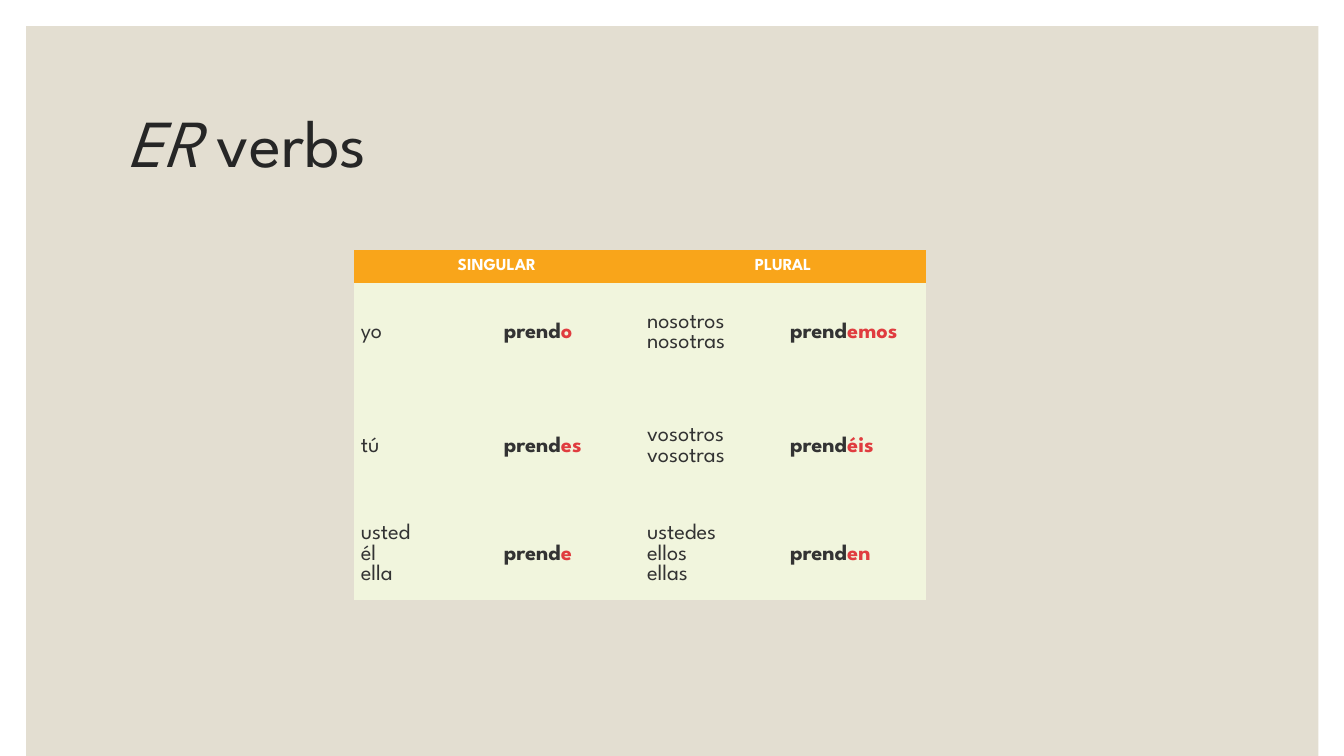
"""Build a slide with the conjugation table of a Spanish ER verb."""
from copy import deepcopy
from dataclasses import dataclass

from pptx import Presentation
from pptx.dml.color import RGBColor as Rgb
from pptx.enum.shapes import MSO_SHAPE as Shape
from pptx.enum.text import MSO_ANCHOR as Anchor, MSO_AUTO_SIZE as AutoSize, PP_ALIGN as Align
from pptx.oxml.ns import qn
from pptx.slide import Slide
from pptx.table import Table, _Cell as Cell
from pptx.util import Pt


@dataclass(frozen=True)
class Theme:
    font: str = "League Spartan"
    panel: str = "E3DED1"
    title: str = "262626"
    header: str = "F9A51A"
    header_text: str = "FFFFFF"
    body: str = "F1F5DD"
    text: str = "333333"
    ending: str = "E03C3F"
    title_size: int = 48
    header_size: int = 12
    body_size: int = 16


@dataclass(frozen=True)
class Form:
    pronouns: str
    ending: str


@dataclass(frozen=True)
class Person:
    singular: Form
    plural: Form
    height: float


THEME = Theme()
NO_STYLE = "{2D5ABB26-0587-4C30-8999-92F81FD0307C}"
STEM = "prend"
NUMBERS = ("SINGULAR", "PLURAL")
HEADER_HEIGHT = 23.8
COLUMN_WIDTH = 102.25
PERSONS = (
    Person(Form("yo", "o"), Form("nosotros\nnosotras", "emos"), 71.3),
    Person(Form("tú", "es"), Form("vosotros\nvosotras", "éis"), 90.7),
    Person(Form("usted\nél\nella", "e"), Form("ustedes\nellos\nellas", "en"), 64.1),
)


def write(paragraph, text: str, *, size: int = THEME.body_size, color: str = THEME.text,
          bold: bool = False, italic: bool = False) -> None:
    """Append formatted text, with a line break at each newline."""
    for number, line in enumerate(text.split("\n")):
        if number:
            paragraph.add_line_break()
        run = paragraph.add_run()
        run.text = line
        font = run.font
        font.name, font.size = THEME.font, Pt(size)
        font.bold, font.italic = bold, italic
        font.color.rgb = Rgb.from_string(color)
        if number:
            run._r.getprevious().append(deepcopy(run._r.rPr))


def format_cell(cell: Cell, fill: str, side: float, edge: float) -> None:
    """Fill a cell, centre it vertically and set its margins."""
    cell.fill.solid()
    cell.fill.fore_color.rgb = Rgb.from_string(fill)
    cell.vertical_anchor = Anchor.MIDDLE
    cell.margin_left = cell.margin_right = Pt(side)
    cell.margin_top = cell.margin_bottom = Pt(edge)


def draw_panel(slide: Slide) -> None:
    """Draw the beige panel behind everything else."""
    panel = slide.shapes.add_shape(Shape.RECTANGLE, Pt(18.7), Pt(18.7), Pt(923), Pt(522.6))
    panel.shadow.inherit = False
    panel.fill.solid()
    panel.fill.fore_color.rgb = Rgb.from_string(THEME.panel)
    panel.line.fill.background()
    slide.shapes._spTree.insert(2, panel._element)


def draw_title(slide: Slide) -> None:
    """Place and write the title."""
    title = slide.shapes.title
    title.left, title.top, title.width, title.height = Pt(84.2), Pt(50.4), Pt(792), Pt(108)
    frame = title.text_frame
    frame.auto_size = AutoSize.NONE
    frame.vertical_anchor = Anchor.MIDDLE
    heading = frame.paragraphs[0]
    heading.alignment = Align.LEFT
    heading.line_spacing = 0.9
    write(heading, "ER", size=THEME.title_size, color=THEME.title, italic=True)
    write(heading, " verbs", size=THEME.title_size, color=THEME.title)


def draw_header(conjugation: Table) -> None:
    """Write the two merged header cells."""
    conjugation.rows[0].height = Pt(HEADER_HEIGHT)
    for index, number in enumerate(NUMBERS):
        first, second = (conjugation.cell(0, 2 * index + step) for step in (0, 1))
        first.merge(second)
        format_cell(first, THEME.header, 3.6, 1.5)
        label = first.text_frame.paragraphs[0]
        label.alignment = Align.CENTER
        write(label, number, size=THEME.header_size, color=THEME.header_text, bold=True)


def draw_person(conjugation: Table, row: int, person: Person) -> None:
    """Write the pronouns and verb forms of one grammatical person."""
    conjugation.rows[row].height = Pt(person.height)
    for index, form in enumerate((person.singular, person.plural)):
        pronoun, verb = (conjugation.cell(row, 2 * index + step) for step in (0, 1))
        for cell in (pronoun, verb):
            format_cell(cell, THEME.body, 5, 2.5)
        write(pronoun.text_frame.paragraphs[0], form.pronouns)
        write(verb.text_frame.paragraphs[0], STEM, bold=True)
        write(verb.text_frame.paragraphs[0], form.ending, color=THEME.ending, bold=True)


def draw_conjugation(slide: Slide) -> None:
    """Draw the conjugation table."""
    columns = 2 * len(NUMBERS)
    height = HEADER_HEIGHT + sum(person.height for person in PERSONS)
    conjugation = slide.shapes.add_table(len(PERSONS) + 1, columns, Pt(252.7), Pt(178.6),
                                         Pt(columns * COLUMN_WIDTH), Pt(height)).table
    conjugation._tbl.tblPr.find(qn("a:tableStyleId")).text = NO_STYLE
    conjugation.horz_banding = False
    draw_header(conjugation)
    for row, person in enumerate(PERSONS, start=1):
        draw_person(conjugation, row, person)


def main() -> None:
    """Build and save the presentation."""
    deck = Presentation()
    deck.slide_width, deck.slide_height = Pt(960), Pt(540)
    slide = deck.slides.add_slide(deck.slide_layouts[5])
    draw_panel(slide)
    draw_title(slide)
    draw_conjugation(slide)
    deck.save("out.pptx")


if __name__ == "__main__":
    main()
